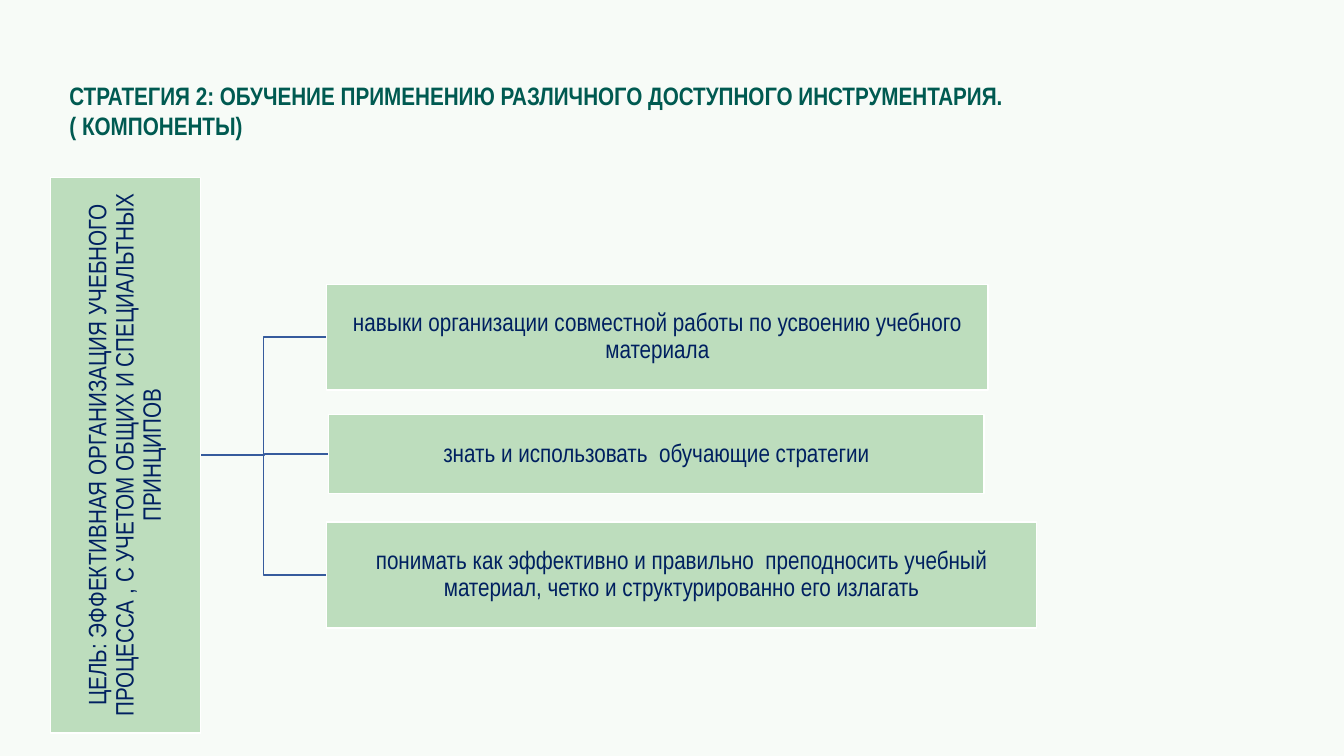
import pptx
import pptx.util
import pptx.dml.color
import pptx.enum.shapes
import pptx.enum.text


def tint(code):
    return pptx.dml.color.RGBColor.from_string(code)


class Deck:
    font = "Arial Narrow"
    size = 18
    ink = "002060"
    box_fill = "BDDDBD"
    edge = "FFFFFF"
    wire = "365B9D"
    inset = 0.01

    def __init__(self, back):
        self.show = pptx.Presentation()
        self.show.slide_width = pptx.util.Inches(13.33)
        self.show.slide_height = pptx.util.Inches(7.5)
        self.slide = self.show.slides.add_slide(self.show.slide_layouts[6])
        fill = self.slide.background.fill
        fill.solid()
        fill.fore_color.rgb = tint(back)

    def across(self, share):
        return round(self.show.slide_width * share / 100)

    def down(self, share):
        return round(self.show.slide_height * share / 100)

    def label(self, para, text, ink, bold=False):
        run = para.add_run()
        run.text = text
        run.font.name = self.font
        run.font.size = pptx.util.Pt(self.size)
        run.font.bold = bold
        run.font.color.rgb = tint(ink)

    def title(self, left, top, width, height, lines, ink):
        frame = self.slide.shapes.add_textbox(
            self.across(left), self.down(top),
            self.across(width), self.down(height)).text_frame
        frame.word_wrap = True
        for i, line in enumerate(lines):
            para = frame.add_paragraph() if i else frame.paragraphs[0]
            self.label(para, line, ink, bold=True)

    def box(self, left, top, width, height, text, upright=False):
        x, y = self.across(left), self.down(top)
        w, h = self.across(width), self.down(height)
        if upright:
            x, y, w, h = x + (w - h) // 2, y + (h - w) // 2, h, w
        shape = self.slide.shapes.add_shape(
            pptx.enum.shapes.MSO_SHAPE.RECTANGLE, x, y, w, h)
        shape.rotation = 270 if upright else 0
        shape.shadow.inherit = False
        shape.fill.solid()
        shape.fill.fore_color.rgb = tint(self.box_fill)
        shape.line.color.rgb = tint(self.edge)
        shape.line.width = pptx.util.Pt(1)
        frame = shape.text_frame
        frame.word_wrap = True
        frame.vertical_anchor = pptx.enum.text.MSO_ANCHOR.MIDDLE
        pad = pptx.util.Inches(self.inset)
        frame.margin_left = frame.margin_right = pad
        frame.margin_top = frame.margin_bottom = pad
        para = frame.paragraphs[0]
        para.alignment = pptx.enum.text.PP_ALIGN.CENTER
        para.line_spacing = 0.9
        self.label(para, text, self.ink)

    def branch(self, start, end):
        mid = (start[0] + end[0]) / 2
        spots = [start, (mid, start[1]), (mid, end[1]), end]
        first, *rest = [(self.across(x), self.down(y)) for x, y in spots]
        pen = self.slide.shapes.build_freeform(*first)
        pen.add_line_segments(rest, close=False)
        shape = pen.convert_to_shape()
        shape.shadow.inherit = False
        shape.fill.background()
        shape.line.color.rgb = tint(self.wire)
        shape.line.width = pptx.util.Pt(1)


def main():
    deck = Deck("F7FBF7")
    deck.title(4.43, 10, 74.27, 13.47, [
        "СТРАТЕГИЯ 2: ОБУЧЕНИЕ ПРИМЕНЕНИЮ РАЗЛИЧНОГО ДОСТУПНОГО ИНСТРУМЕНТАРИЯ.",
        "( КОМПОНЕНТЫ)"], "005A51")

    left, top, width, height = goal = (3.75, 23.47, 11.18, 73.47)
    root = (left + width, top + height / 2)
    parts = [
        (24.31, 37.6, 49.21, 14,
         "навыки организации совместной работы по усвоению учебного материала"),
        (24.46, 54.8, 48.76, 10.53,
         "знать и использовать  обучающие стратегии"),
        (24.31, 69.07, 52.81, 14,
         "понимать как эффективно и правильно  преподносить учебный материал, "
         "четко и структурированно его излагать"),
    ]
    for x, y, _, high, _ in parts:
        deck.branch(root, (x, y + high / 2))
    deck.box(*goal, "ЦЕЛЬ: ЭФФЕКТИВНАЯ ОРГАНИЗАЦИЯ УЧЕБНОГО ПРОЦЕССА , "
             "С УЧЕТОМ ОБЩИХ И СПЕЦИАЛЬТНЫХ ПРИНЦИПОВ", upright=True)
    for part in parts:
        deck.box(*part)
    deck.show.save("out.pptx")


if __name__ == "__main__":
    main()
